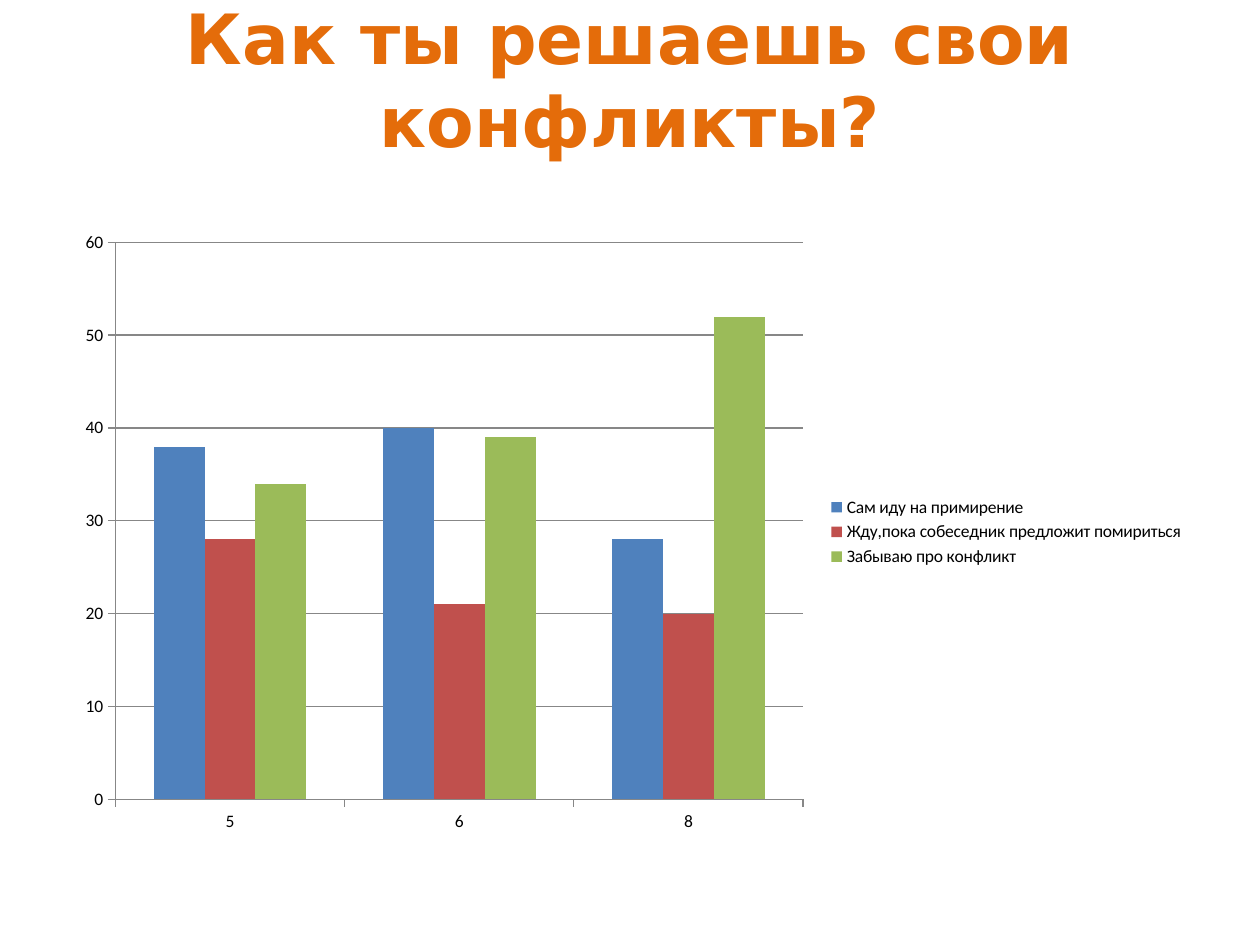
from pptx import Presentation
from pptx.chart.data import CategoryChartData
from pptx.dml.color import RGBColor
from pptx.enum.chart import XL_CHART_TYPE, XL_LEGEND_POSITION, XL_TICK_MARK
from pptx.enum.text import MSO_ANCHOR, PP_ALIGN
from pptx.util import Pt

PX = 914400 // 126
ORANGE = RGBColor(0xE4, 0x6C, 0x0A)
BLUE = RGBColor(0x4F, 0x81, 0xBD)
RED = RGBColor(0xC0, 0x50, 0x4D)
GREEN = RGBColor(0x9B, 0xBB, 0x59)
GRAY = RGBColor(0x87, 0x87, 0x87)
BLACK = RGBColor(0, 0, 0)

ANSWERS = [
    ("Сам иду на примирение", (38, 40, 28), BLUE),
    ("Жду,пока собеседник предложит помириться", (28, 21, 20), RED),
    ("Забываю про конфликт", (34, 39, 52), GREEN),
]

presentation = Presentation()
presentation.slide_width = 1260 * PX
presentation.slide_height = 945 * PX
slide = presentation.slides.add_slide(presentation.slide_layouts[6])

title = slide.shapes.add_textbox(63 * PX, 38 * PX, 1134 * PX, 157 * PX)
text_frame = title.text_frame
text_frame.word_wrap = True
text_frame.vertical_anchor = MSO_ANCHOR.MIDDLE
text_frame.margin_bottom = 83 * PX
paragraph = text_frame.paragraphs[0]
paragraph.alignment = PP_ALIGN.CENTER
run = paragraph.add_run()
run.text = "Как ты решаешь свои конфликты?"
run.font.name = "DejaVu Sans"
run.font.size = Pt(39.6)
run.font.bold = True
run.font.color.rgb = ORANGE

chart_data = CategoryChartData()
chart_data.categories = ["5", "6", "8"]
for name, values, color in ANSWERS:
    chart_data.add_series(name, values)

chart = slide.shapes.add_chart(
    XL_CHART_TYPE.COLUMN_CLUSTERED, 63 * PX, 220 * PX, 1134 * PX, 624 * PX, chart_data
).chart
chart.has_title = False
chart.font.name = "Calibri"
chart.font.size = Pt(10)
chart.font.color.rgb = BLACK
chart.has_legend = True
chart.legend.position = XL_LEGEND_POSITION.RIGHT
chart.legend.include_in_layout = False

plot = chart.plots[0]
plot.gap_width = 150
plot.overlap = 0
plot.vary_by_categories = False
for series, (name, values, color) in zip(plot.series, ANSWERS):
    series.format.fill.solid()
    series.format.fill.fore_color.rgb = color

value_axis = chart.value_axis
value_axis.minimum_scale = 0
value_axis.maximum_scale = 60
value_axis.major_unit = 10
value_axis.has_major_gridlines = True
for axis in (chart.category_axis, value_axis):
    axis.major_tick_mark = XL_TICK_MARK.OUTSIDE
    axis.minor_tick_mark = XL_TICK_MARK.NONE
for line in (
    chart.category_axis.format.line,
    value_axis.format.line,
    value_axis.major_gridlines.format.line,
):
    line.color.rgb = GRAY
    line.width = Pt(0.75)

presentation.save("out.pptx")
